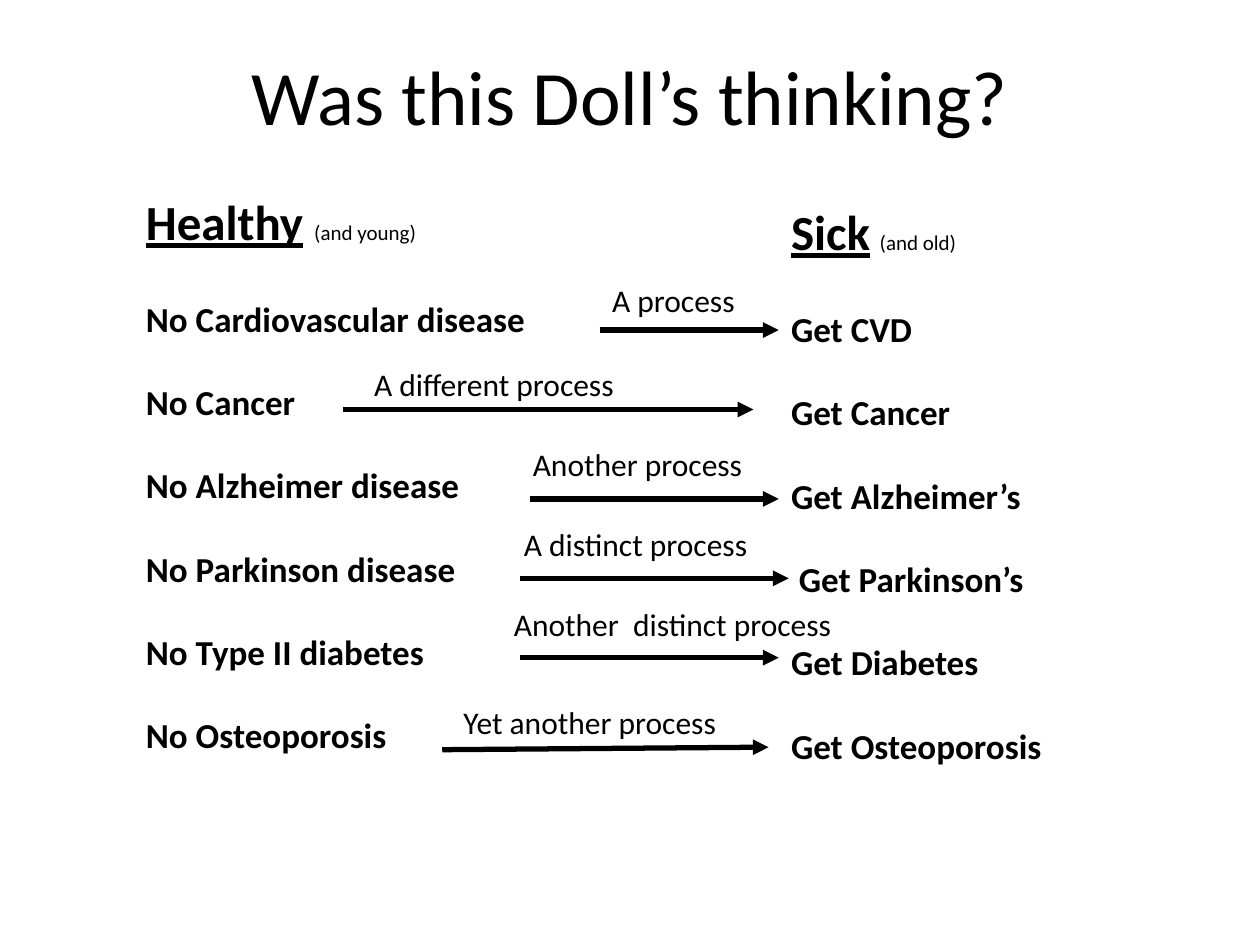
from lxml.etree import SubElement
from pptx import Presentation
from pptx.dml.color import RGBColor
from pptx.enum.shapes import MSO_CONNECTOR as Conn
from pptx.enum.text import MSO_ANCHOR as Anchor, PP_ALIGN as Align
from pptx.oxml.ns import qn
from pptx.util import Inches, Pt

# Content
TITLE = "Was this Doll’s thinking?"
HEADS = [  # word, note, left, top, width
    ("Healthy", "(and young)", 1.06, 1.47, 4.09),
    ("Sick", "(and old)", 6.18, 1.55, 2.99),
]
LISTS = [  # left, top, width, items
    (1.06, 2.31, 4.11, [
        "No Cardiovascular disease", "No Cancer", "No Alzheimer disease",
        "No Parkinson disease", "No Type II diabetes", "No Osteoporosis"]),
    (6.18, 2.39, 2.77, [
        "Get CVD", "Get Cancer", "Get Alzheimer’s",
        " Get Parkinson’s", "Get Diabetes", "Get Osteoporosis"]),
]
STEPS = [  # label, its left, top, width; arrow start and end
    ("A process", 4.76, 2.18, 1.5, (4.76, 2.62), (6.18, 2.62)),
    ("A different process", 2.87, 2.85, 2.91, (2.72, 3.25), (5.98, 3.25)),
    ("Another process", 4.13, 3.48, 2.28, (4.21, 3.96), (6.18, 3.96)),
    ("A distinct process", 4.06, 4.12, 2.6, (4.13, 4.59), (6.26, 4.59)),
    ("Another  distinct process", 3.98, 4.75, 3.31, (4.13, 5.22), (6.18, 5.22)),
    ("Yet another process", 3.58, 5.53, 3.15, (3.51, 5.95), (6.1, 5.93)),
]
COLORS = {"ink": "000000", "page": "FFFFFF"}
FONT = "Calibri"
GAP = 23.6  # points between list items

deck = Presentation()
deck.slide_width, deck.slide_height = Inches(10), Inches(7.5)
slide = deck.slides.add_slide(deck.slide_layouts[6])
slide.background.fill.solid()
slide.background.fill.fore_color.rgb = RGBColor.from_string(COLORS["page"])
ink = RGBColor.from_string(COLORS["ink"])


def add_box(left, top, width, height):
    box = slide.shapes.add_textbox(*map(Inches, (left, top, width, height)))
    box.text_frame.word_wrap = True
    return box.text_frame


def add_run(para, text, size, bold=False, line=False):
    run = para.add_run()
    run.text = text
    font = run.font
    font.name, font.size, font.bold, font.underline = FONT, Pt(size), bold, line
    font.color.rgb = ink


def add_arrow(start, end):
    points = map(Inches, (*start, *end))
    arrow = slide.shapes.add_connector(Conn.STRAIGHT, *points)
    arrow.line.color.rgb = ink
    arrow.line.width = Pt(3)
    SubElement(arrow.line._get_or_add_ln(), qn("a:tailEnd"), type="triangle")
    SubElement(arrow._element.spPr, qn("a:effectLst"))


# Title
frame = add_box(0.75, 0.13, 8.5, 1.25)
frame.vertical_anchor = Anchor.MIDDLE
frame.paragraphs[0].alignment = Align.CENTER
add_run(frame.paragraphs[0], TITLE, 44)

# Column heads
for word, note, left, top, width in HEADS:
    para = add_box(left, top, width, 0.57).paragraphs[0]
    add_run(para, word, 28, bold=True, line=True)
    add_run(para, " ", 28 if word == "Healthy" else 24)
    add_run(para, note, 12)

# Condition lists
for left, top, width, items in LISTS:
    frame = add_box(left, top, width, 3.8)
    for i, item in enumerate(items):
        para = frame.add_paragraph() if i else frame.paragraphs[0]
        para.space_before = Pt(GAP if i else 0)
        add_run(para, item, 20, bold=True)

# Processes and their arrows
for label, left, top, width, start, end in STEPS:
    add_arrow(start, end)
    add_run(add_box(left, top, width, 0.4).paragraphs[0], label, 18)

deck.save("out.pptx")
